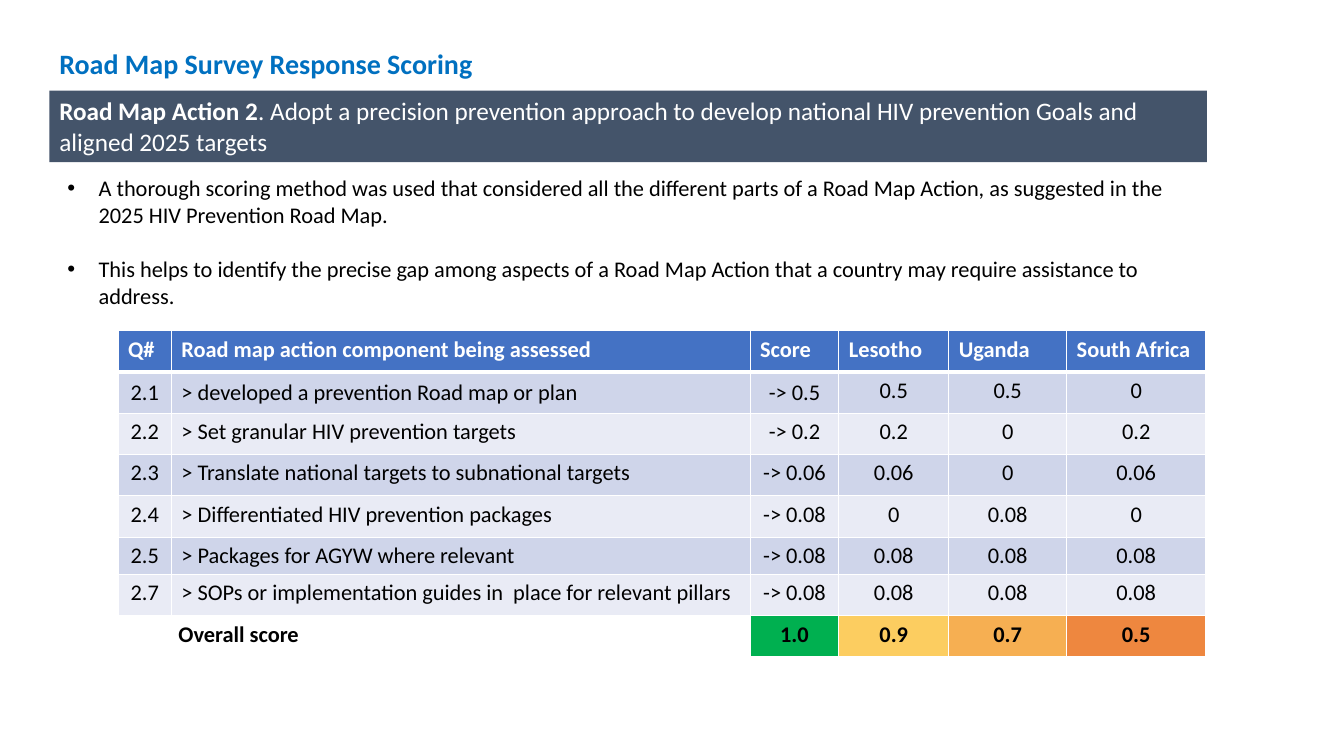
from dataclasses import dataclass
from typing import Optional

from lxml.etree import SubElement
from pptx import Presentation
from pptx.dml.color import RGBColor as RGB
from pptx.enum.shapes import MSO_SHAPE as SHAPE
from pptx.enum.text import MSO_ANCHOR as ANCHOR, PP_ALIGN as ALIGN
from pptx.oxml.ns import qn
from pptx.util import Inches, Pt


@dataclass(frozen=True)
class Theme:
    font: str = "Calibri"
    title: str = "0070C0"
    banner: str = "44546A"
    header: str = "4472C4"
    bands: tuple = ("CFD5EA", "E9EBF5")
    totals: tuple = ("00B050", "FCCD60", "F6AF52", "EE873F")
    white: str = "FFFFFF"
    black: str = "000000"
    title_size: int = 20
    banner_size: int = 18
    body_size: int = 16


@dataclass(frozen=True)
class Box:
    left: float
    top: float
    width: float
    height: float

    def emu(self) -> tuple:
        return tuple(Inches(v) for v in (self.left, self.top, self.width, self.height))


@dataclass(frozen=True)
class CellStyle:
    fill: Optional[str]
    color: str
    bold: bool = False
    align: ALIGN = ALIGN.LEFT
    anchor: ANCHOR = ANCHOR.TOP
    indent: float = 0.1
    top_line: float = 1
    bottom_line: float = 1


THEME = Theme()
TITLE_BOX = Box(0.49, 0.39, 11.45, 0.45)
BANNER_BOX = Box(0.49, 0.9, 11.48, 0.71)
BULLET_BOX = Box(0.57, 1.68, 11.4, 1.45)
TABLE_BOX = Box(1.17, 3.28, 10.79, 3.24)

BULLETS = (
    "A thorough scoring method was used that considered all the different parts of a "
    "Road Map Action, as suggested in the 2025 HIV Prevention Road Map.",
    "This helps to identify the precise gap among aspects of a Road Map Action that a "
    "country may require assistance to address.",
)
COL_WIDTHS = (0.53, 5.74, 0.88, 1.09, 1.17, 1.38)
ROW_HEIGHT, TIGHT_ROW, TIGHT_HEIGHT = 0.41, 5, 0.37
HEADER = ("Q#", "Road map action component being assessed", "Score",
          "Lesotho", "Uganda", "South Africa")
SCORES = (
    ("2.1", "> developed a prevention Road map or plan", "-> 0.5", "0.5", "0.5", "0"),
    ("2.2", "> Set granular HIV prevention targets", "-> 0.2", "0.2", "0", "0.2"),
    ("2.3", "> Translate national targets to subnational targets",
     "-> 0.06", "0.06", "0", "0.06"),
    ("2.4", "> Differentiated HIV prevention packages", "-> 0.08", "0", "0.08", "0"),
    ("2.5", "> Packages for AGYW where relevant", "-> 0.08", "0.08", "0.08", "0.08"),
    ("2.7", "> SOPs or implementation guides in  place for relevant pillars",
     "-> 0.08", "0.08", "0.08", "0.08"),
)
OVERALL = ("Overall score", "", "1.0", "0.9", "0.7", "0.5")


def add_run(p, text: str, size: float, color: str, bold: bool = False) -> None:
    r = p.add_run()
    r.text = text
    r.font.name = THEME.font
    r.font.size = Pt(size)
    r.font.bold = bold
    r.font.color.rgb = RGB.from_string(color)


def add_textbox(slide, box: Box):
    tf = slide.shapes.add_textbox(*box.emu()).text_frame
    tf.word_wrap = True
    return tf


def add_bullet(p) -> None:
    pPr = p._p.get_or_add_pPr()
    pPr.set("marL", str(Inches(0.31)))
    pPr.set("indent", str(-Inches(0.31)))
    SubElement(pPr, qn("a:buFont"), typeface="Arial")
    SubElement(pPr, qn("a:buChar"), char="•")


def add_borders(cell, style: CellStyle) -> None:
    tcPr = cell._tc.get_or_add_tcPr()
    widths = {"lnL": 1, "lnR": 1, "lnT": style.top_line, "lnB": style.bottom_line}
    for side, width in widths.items():
        ln = SubElement(tcPr, qn(f"a:{side}"), w=str(Pt(width)))
        SubElement(SubElement(ln, qn("a:solidFill")), qn("a:srgbClr"), val=THEME.white)


def fill_cell(cell, text: str, style: CellStyle) -> None:
    add_borders(cell, style)
    if style.fill:
        cell.fill.solid()
        cell.fill.fore_color.rgb = RGB.from_string(style.fill)
    else:
        cell.fill.background()
    cell.vertical_anchor = style.anchor
    cell.margin_left = Inches(style.indent)
    p = cell.text_frame.paragraphs[0]
    p.alignment = style.align
    if text:
        add_run(p, text, THEME.body_size, style.color, style.bold)


def cell_style(row: int, col: int) -> CellStyle:
    if row == 0:
        return CellStyle(THEME.header, THEME.white, bold=True, bottom_line=3)
    if row > len(SCORES):
        if col < 2:
            return CellStyle(None, THEME.black, bold=True, indent=0.6)
        return CellStyle(THEME.totals[col - 2], THEME.black, True, ALIGN.CENTER)
    return CellStyle(
        THEME.bands[(row - 1) % 2], THEME.black,
        align=ALIGN.LEFT if col == 1 else ALIGN.CENTER,
        anchor=ANCHOR.MIDDLE if row == 1 and col < 3 else ANCHOR.TOP,
        top_line=3 if row == 1 else 1,
    )


def add_title(slide) -> None:
    tf = add_textbox(slide, TITLE_BOX)
    tf.vertical_anchor = ANCHOR.BOTTOM
    p = tf.paragraphs[0]
    p.alignment = ALIGN.JUSTIFY
    p.line_spacing = 1.07
    p.space_after = Pt(8)
    add_run(p, "Road Map Survey Response Scoring", THEME.title_size, THEME.title, True)


def add_score_table(slide) -> None:
    rows = (HEADER, *SCORES, OVERALL)
    table = slide.shapes.add_table(len(rows), len(HEADER), *TABLE_BOX.emu()).table
    for column, width in zip(table.columns, COL_WIDTHS):
        column.width = Inches(width)
    for i, texts in enumerate(rows):
        table.rows[i].height = Inches(TIGHT_HEIGHT if i == TIGHT_ROW else ROW_HEIGHT)
        for j, text in enumerate(texts):
            fill_cell(table.cell(i, j), text, cell_style(i, j))
    last = len(rows) - 1
    table.cell(last, 0).merge(table.cell(last, 1))


def add_banner(slide) -> None:
    sp = slide.shapes.add_shape(SHAPE.RECTANGLE, *BANNER_BOX.emu())
    sp.shadow.inherit = False
    sp.fill.solid()
    sp.fill.fore_color.rgb = RGB.from_string(THEME.banner)
    sp.line.fill.background()
    tf = sp.text_frame
    tf.word_wrap = True
    tf.vertical_anchor = ANCHOR.TOP
    p = tf.paragraphs[0]
    p.alignment = ALIGN.LEFT
    add_run(p, "Road Map Action 2", THEME.banner_size, THEME.white, True)
    add_run(p, ". Adopt a precision prevention approach to develop national HIV "
               "prevention Goals and aligned 2025 targets", THEME.banner_size, THEME.white)


def add_bullets(slide) -> None:
    tf = add_textbox(slide, BULLET_BOX)
    for i, text in enumerate(BULLETS):
        p = tf.add_paragraph() if i else tf.paragraphs[0]
        add_bullet(p)
        if i:
            p.space_before = Pt(19.5)
        add_run(p, text, THEME.body_size, THEME.black)


def main() -> None:
    prs = Presentation()
    prs.slide_width, prs.slide_height = Inches(13.33), Inches(7.5)
    slide = prs.slides.add_slide(prs.slide_layouts[6])
    # Heading, scores, action banner and method notes
    add_title(slide)
    add_score_table(slide)
    add_banner(slide)
    add_bullets(slide)
    prs.save("out.pptx")


if __name__ == "__main__":
    main()
